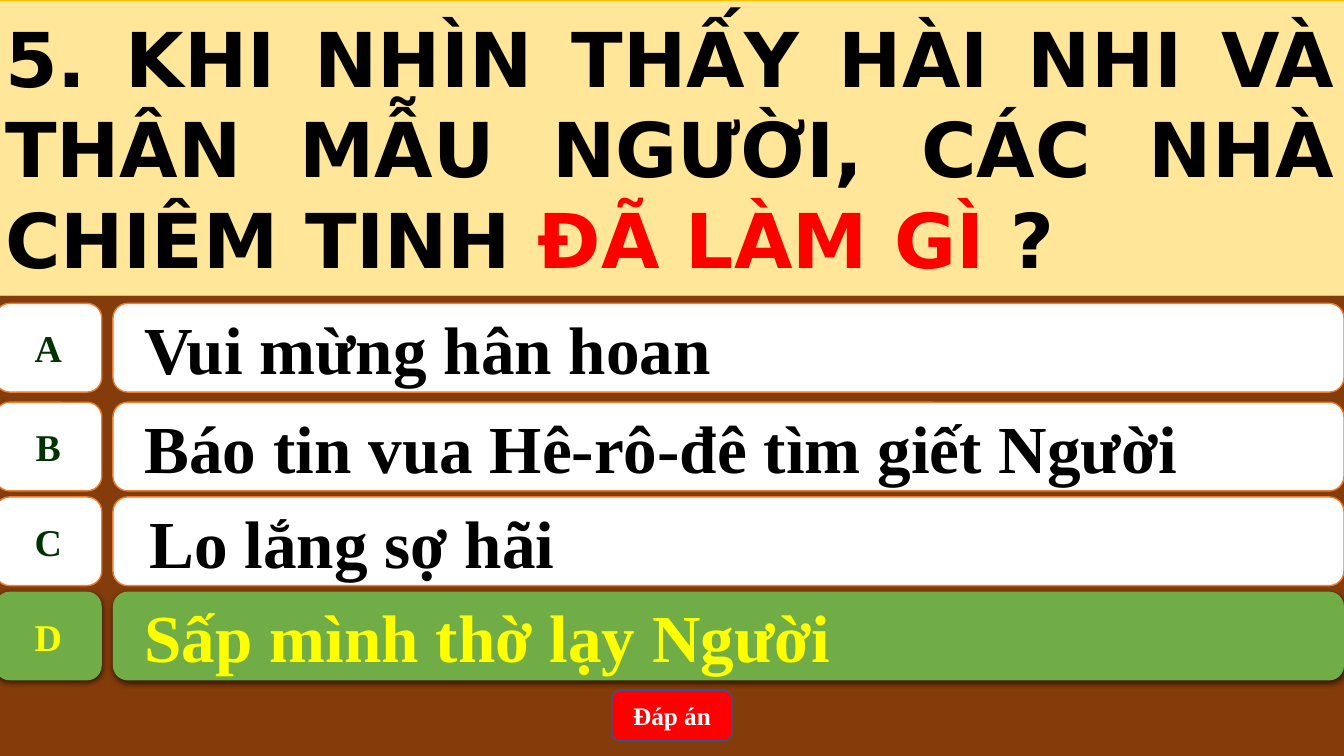
"""Build a quiz slide with a question, four answers and the right answer marked."""
from lxml import etree
from pptx import Presentation
from pptx.dml.color import RGBColor
from pptx.enum import shapes, text
from pptx.oxml import ns
from pptx.util import Inches, Pt

BROWN = RGBColor(0x84, 0x3C, 0x0B)
CREAM = RGBColor(0xFF, 0xE6, 0x99)
GOLD = RGBColor(0xFF, 0xC0, 0x00)
ORANGE = RGBColor(0xED, 0x7D, 0x31)
GREEN = RGBColor(0x70, 0xAD, 0x47)
DARK_GREEN = RGBColor(0x00, 0x33, 0x00)
YELLOW = RGBColor(0xFF, 0xFF, 0x00)
RED = RGBColor(0xFF, 0x00, 0x00)
NAVY = RGBColor(0x32, 0x54, 0x91)
WHITE = RGBColor(0xFF, 0xFF, 0xFF)
BLACK = RGBColor(0x00, 0x00, 0x00)


def add_run(paragraph, words, size, color, font="Times New Roman"):
    run = paragraph.add_run()
    run.text = words
    run.font.name, run.font.size, run.font.bold = font, Pt(size), True
    run.font.color.rgb = color


def add_box(parent, preset, place, fill, line, words, size, color, align):
    box = parent.add_shape(preset, *[Inches(n) for n in place])
    box.shadow.inherit = False
    box.fill.solid()
    box.fill.fore_color.rgb = fill
    if line is None:
        box.line.fill.background()
    else:
        box.line.color.rgb = line
        box.line.width = Pt(1)
    box.text_frame.vertical_anchor = text.MSO_ANCHOR.MIDDLE
    paragraph = box.text_frame.paragraphs[0]
    paragraph.alignment = align
    add_run(paragraph, words, size, color)
    return box


deck = Presentation()
deck.slide_width, deck.slide_height = Inches(13.33), Inches(7.5)
slide = deck.slides.add_slide(deck.slide_layouts[5])
slide.background.fill.solid()
slide.background.fill.fore_color.rgb = BROWN

question = slide.shapes.title
question.left, question.top = Inches(-0.05), Inches(0)
question.width, question.height = Inches(13.39), Inches(2.93)
question.fill.solid()
question.fill.fore_color.rgb = CREAM
question.line.color.rgb = GOLD
question.line.width = Pt(0.5)
question.text_frame.auto_size = text.MSO_AUTO_SIZE.NONE
question.text_frame.vertical_anchor = text.MSO_ANCHOR.MIDDLE
wording = question.text_frame.paragraphs[0]
wording.alignment = text.PP_ALIGN.JUSTIFY
for words, color in [
    ("5. KHI NHÌN THẤY HÀI NHI VÀ THÂN MẪU NGƯỜI, CÁC NHÀ CHIÊM TINH ", BLACK),
    ("ĐÃ LÀM GÌ ", RED),
    ("?", BLACK),
]:
    add_run(wording, words, 54, color, "DejaVu Sans")

answers = [
    ("A", "Vui mừng hân hoan", 3.01, 0.27),
    ("B", "Báo tin vua Hê-rô-đê tìm giết Người", 3.99, 0.27),
    ("C", "Lo lắng sợ hãi", 4.93, 0.32),
    ("D", "Sấp mình thờ lạy Người", 5.87, 0.27),
]
for letter, answer, top, inset in answers:
    correct = letter == "D"
    fill, line = (GREEN, None) if correct else (WHITE, ORANGE)
    row = slide.shapes.add_group_shape()
    badge = add_box(
        row.shapes, shapes.MSO_SHAPE.FLOWCHART_ALTERNATE_PROCESS, (-0.05, top, 1.06, 0.88),
        fill, line, letter, 27, YELLOW if correct else DARK_GREEN, text.PP_ALIGN.CENTER)
    badge.text_frame.word_wrap = False
    bar = add_box(
        row.shapes, shapes.MSO_SHAPE.ROUNDED_RECTANGLE, (1.12, top, 12.21, 0.88),
        fill, line, answer, 48, YELLOW if correct else BLACK, text.PP_ALIGN.LEFT)
    bar.text_frame.margin_left = Inches(inset)
    if correct:
        for part in (badge, bar):
            effects = part._element.spPr.find(ns.qn("a:effectLst"))
            shadow = etree.SubElement(
                effects, ns.qn("a:outerShdw"), blurRad=str(Pt(4.5)), dist=str(Pt(1.5)),
                dir="5400000", algn="ctr", rotWithShape="0")
            tint = etree.SubElement(shadow, ns.qn("a:srgbClr"), val=str(BLACK))
            etree.SubElement(tint, ns.qn("a:alpha"), val="63000")

add_box(
    slide.shapes, shapes.MSO_SHAPE.ROUNDED_RECTANGLE, (6.07, 6.85, 1.19, 0.5),
    RED, NAVY, "Đáp án", 18, WHITE, text.PP_ALIGN.CENTER)

deck.save("out.pptx")
